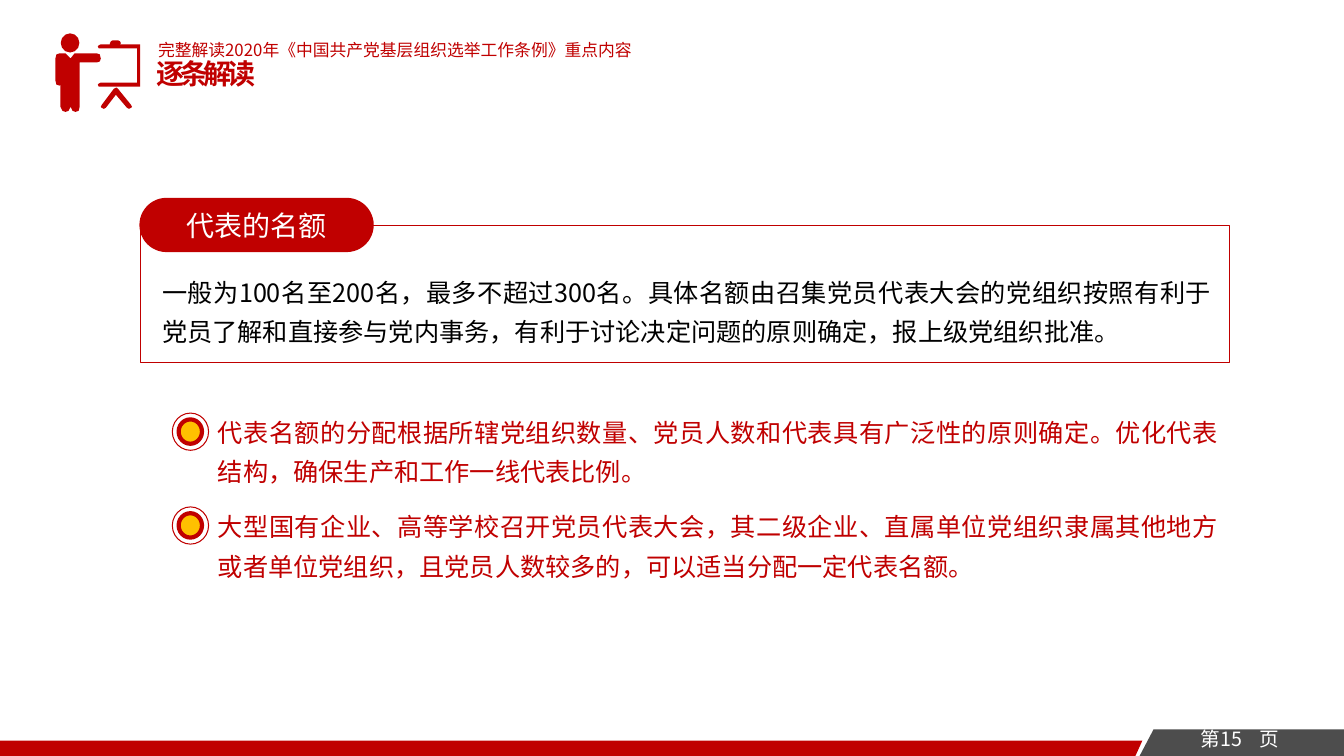
import pptx
import pptx.dml.color
import pptx.enum.shapes
import pptx.enum.text
import pptx.oxml
import pptx.oxml.ns
import pptx.util

Pt = pptx.util.Pt
Shape = pptx.enum.shapes.MSO_SHAPE
Align = pptx.enum.text.PP_ALIGN
Anchor = pptx.enum.text.MSO_ANCHOR

FONT = "Noto Sans CJK SC"
RED, GOLD, GREY, WHITE, BLACK = "C00000", "FFC000", "4D4D4D", "FFFFFF", "000000"

# Icon outlines, in hundredths of an inch (0.72 points)
PRESENTER = [
    (96, 53), (74, 53), (70, 58), (65, 53), (59, 53), (56.2, 54.5), (55, 58),
    (55, 80), (56.2, 83.5), (59, 85), (60, 84), (60, 106), (61.5, 109.5),
    (65, 111), (68.5, 109.5), (70, 106), (71.5, 109.5), (75, 111),
    (77.8, 109.5), (79, 106), (79, 62), (96, 62), (99, 61), (100, 58), (99, 54.5),
]
BOARD = [
    (136, 44), (119, 44), (120, 43), (119, 41), (117, 40), (112, 40), (110, 41),
    (109, 43), (109, 44), (100, 44), (98, 44.6), (97, 46), (98, 47.5), (100, 48),
    (136, 48), (136, 82), (100, 82), (98, 82.6), (97, 84), (98, 85.5), (100, 86),
    (139, 86), (139, 44),
]
STAND = [
    (130, 104), (117, 88), (116, 87), (115, 87), (113, 88), (101, 104),
    (100.5, 105.5), (101, 107), (103, 107.8), (105, 107), (115, 94), (126, 107),
    (128, 107.8), (130, 107), (130.6, 105.5),
]
RULES = [
    "代表名额的分配根据所辖党组织数量、党员人数和代表具有广泛性的原则确定。优化代表结构，确保生产和工作一线代表比例。",
    "大型国有企业、高等学校召开党员代表大会，其二级企业、直属单位党组织隶属其他地方或者单位党组织，且党员人数较多的，可以适当分配一定代表名额。",
]


def color(value):
    return pptx.dml.color.RGBColor.from_string(value)


def paint(shape, fill=None, line=None, weight=1):
    shape.shadow.inherit = False
    if fill:
        shape.fill.solid()
        shape.fill.fore_color.rgb = color(fill)
    else:
        shape.fill.background()
    if line:
        shape.line.color.rgb = color(line)
        shape.line.width = Pt(weight)
    else:
        shape.line.fill.background()


def add_preset(page, kind, left, top, width, height, **style):
    shape = page.shapes.add_shape(kind, Pt(left), Pt(top), Pt(width), Pt(height))
    paint(shape, **style)
    return shape


def add_outline(page, points, fill, unit=1.0):
    """Draw a closed polygon whose coordinates count units of so many points."""
    builder = page.shapes.build_freeform(*points[0], scale=Pt(unit))
    builder.add_line_segments(points[1:], close=True)
    paint(builder.convert_to_shape(), fill=fill)


def place(box, left, top, width, height):
    box.left, box.top, box.width, box.height = Pt(left), Pt(top), Pt(width), Pt(height)


def add_box(page, left, top, width, height):
    return page.shapes.add_textbox(Pt(left), Pt(top), Pt(width), Pt(height))


def write(box, text, size, ink, align=Align.LEFT, anchor=Anchor.TOP,
          spacing=1.0, gap=0, bold=False, tracking=0):
    """Fill a box with text; gap is the space between its paragraphs."""
    frame = box.text_frame
    frame.text = text
    frame.word_wrap = True
    frame.auto_size = pptx.enum.text.MSO_AUTO_SIZE.NONE
    frame.vertical_anchor = anchor
    for number, para in enumerate(frame.paragraphs):
        para.alignment = align
        para.line_spacing = spacing
        para.space_before = Pt(gap if number else 0)
        for span in para.runs:
            span.font.name = FONT
            span.font.size = Pt(size)
            span.font.bold = bold
            span.font.color.rgb = color(ink)
            properties = span.font._element
            properties.find(pptx.oxml.ns.qn("a:latin")).addnext(pptx.oxml.parse_xml(
                f'<a:ea {pptx.oxml.ns.nsdecls("a")} typeface="{FONT}"/>'))
            if tracking:
                properties.set("spc", str(tracking * 100))


def remove_bullets(box):
    for para in box.text_frame.paragraphs:
        properties = para._p.get_or_add_pPr()
        properties.set("marL", "0")
        properties.set("indent", "0")
        properties.append(pptx.oxml.parse_xml(
            f'<a:buNone {pptx.oxml.ns.nsdecls("a")}/>'))


def add_tab(para, position):
    para._p.get_or_add_pPr().append(pptx.oxml.parse_xml(
        f'<a:tabLst {pptx.oxml.ns.nsdecls("a")}>'
        f'<a:tab pos="{Pt(position)}" algn="l"/></a:tabLst>'))


def add_footer(page):
    add_outline(page, [(0, 540), (810.7, 540), (816.5, 529.2), (0, 529.2)], RED)
    add_outline(page, [(823.7, 520.6), (814.3, 540), (960, 540), (960, 520.6)], GREY)
    number = add_box(page, 857.8, 519, 80, 21)
    frame = number.text_frame
    frame.margin_left = frame.margin_right = frame.margin_top = frame.margin_bottom = 0
    write(number, "第15\t页", 14, WHITE)
    add_tab(frame.paragraphs[0], 42)


def add_header(page):
    add_preset(page, Shape.OVAL, 43.4, 23.8, 13.3, 13.7, fill=RED)
    for points in (PRESENTER, BOARD, STAND):
        add_outline(page, points, RED, unit=0.72)
    title = page.shapes.title
    place(title, 104.4, 36.7, 104.4, 31.7)
    write(title, "逐条解读", 20, RED, Align.JUSTIFY, bold=True, tracking=-3)
    subtitle = add_box(page, 105.8, 15.8, 553.7, 39.6)
    write(subtitle, "完整解读2020年《中国共产党基层组织选举工作条例》重点内容",
          12, RED, anchor=Anchor.MIDDLE)


def add_quota_panel(page):
    add_preset(page, Shape.RECTANGLE, 100.1, 161.2, 778.3, 97.9, line=RED, weight=0.5)
    label = add_preset(page, Shape.ROUNDED_RECTANGLE, 100.1, 141.8, 166.4, 37.8,
                       fill=RED, line=RED)
    label.adjustments[0] = 0.5
    write(label, "代表的名额", 20, WHITE, Align.CENTER, Anchor.MIDDLE)
    detail = add_box(page, 108.7, 187.9, 763.9, 61.2)
    write(detail, "一般为100名至200名，最多不超过300名。具体名额由召集党员代表大会的党组织按照"
          "有利于党员了解和直接参与党内事务，有利于讨论决定问题的原则确定，报上级党组织批准。",
          18, BLACK, Align.JUSTIFY, spacing=1.3)


def add_rules(page):
    body = page.placeholders[1]
    place(body, 148.4, 288, 729.2, 128.2)
    write(body, "\n".join(RULES), 18, RED, Align.JUSTIFY, spacing=1.3, gap=11.2)
    remove_bullets(body)
    for number in range(len(RULES)):
        top = 295.1 + 67 * number
        add_preset(page, Shape.OVAL, 123.1, top, 25.9, 26.6,
                   fill=WHITE, line=RED, weight=0.75)
        add_preset(page, Shape.OVAL, 127.6, top + 4.5, 16.7, 17.4,
                   fill=GOLD, line=RED, weight=3)


def main():
    deck = pptx.Presentation()
    deck.slide_width, deck.slide_height = Pt(960), Pt(540)
    page = deck.slides.add_slide(deck.slide_layouts[1])
    add_footer(page)
    add_header(page)
    add_quota_panel(page)
    add_rules(page)
    deck.save("out.pptx")


if __name__ == "__main__":
    main()
